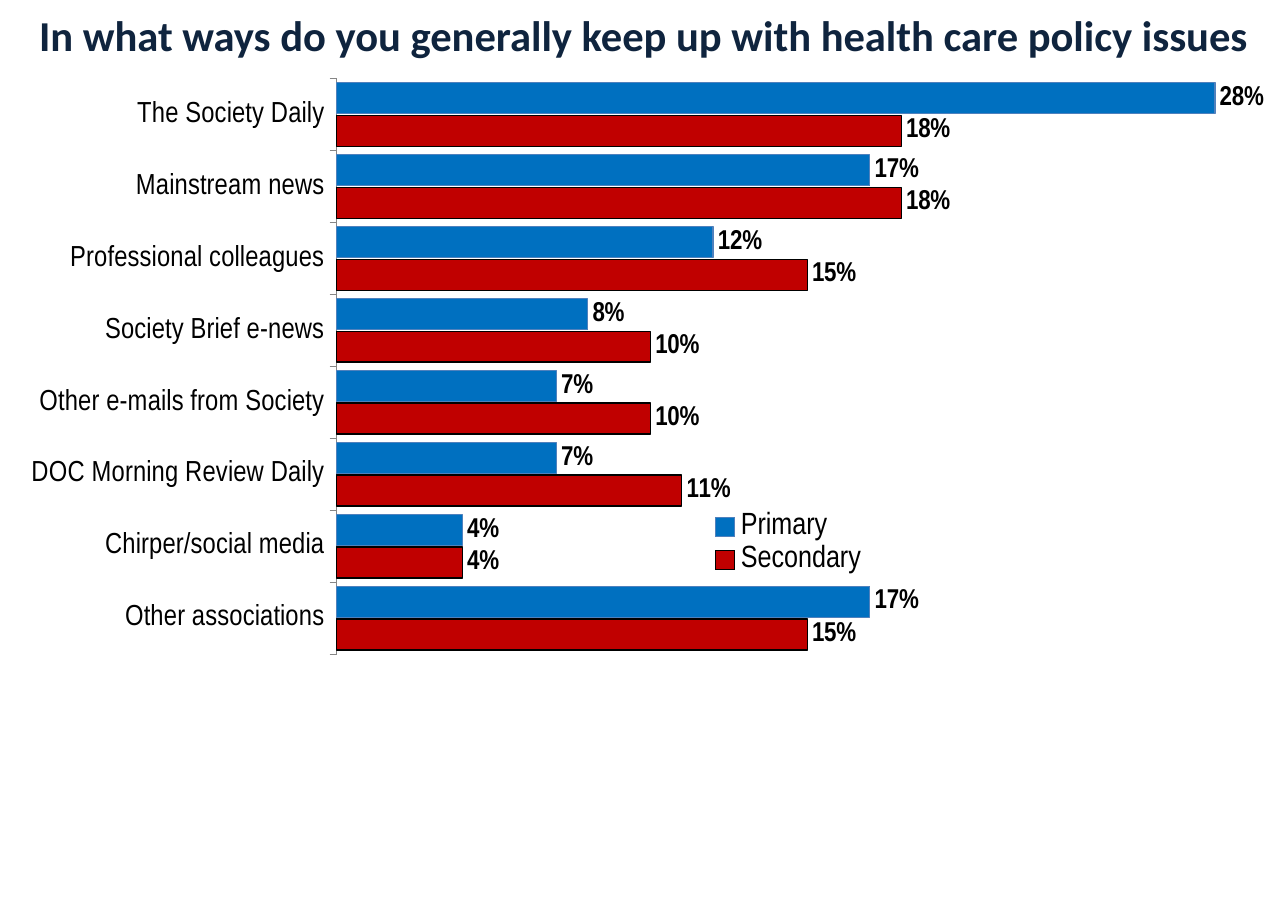
from dataclasses import dataclass

import pptx
import pptx.chart.data
import pptx.dml.color
import pptx.enum.chart
import pptx.enum.text
import pptx.oxml
import pptx.oxml.ns
import pptx.util

Pt = pptx.util.Pt
LABEL_FONT = "Arial Narrow"


@dataclass
class Answers:
    name: str
    fill: str
    outline: str
    shares: list[float]


SOURCES = [
    "Other associations", "Chirper/social media", "DOC Morning Review Daily",
    "Other e-mails from Society", "Society Brief e-news", "Professional colleagues",
    "Mainstream news", "The Society Daily",
]
ANSWERS = [
    Answers("Secondary", "C00000", "000000",
            [0.15, 0.04, 0.11, 0.10, 0.10, 0.15, 0.18, 0.18]),
    Answers("Primary", "0070C0", "4F81BD",
            [0.17, 0.04, 0.07, 0.07, 0.08, 0.12, 0.17, 0.28]),
]


def color(value: str) -> pptx.dml.color.RGBColor:
    return pptx.dml.color.RGBColor.from_string(value)


def style_font(font, name: str, size: float, fill: str = "000000", bold: bool = False) -> None:
    font.name = name
    font.size = Pt(size)
    font.bold = bold
    font.color.rgb = color(fill)


def add_text(page, text: str, *, left: float, top: float, width: float, height: float,
             font: str, size: float, fill: str, bold: bool) -> None:
    """Add a text box with one paragraph, centred both ways."""
    box = page.shapes.add_textbox(Pt(left), Pt(top), Pt(width), Pt(height))
    frame = box.text_frame
    frame.word_wrap = True
    frame.vertical_anchor = pptx.enum.text.MSO_ANCHOR.MIDDLE
    para = frame.paragraphs[0]
    para.alignment = pptx.enum.text.PP_ALIGN.CENTER
    span = para.add_run()
    span.text = text
    style_font(span.font, font, size, fill, bold)


def place(element, index: int, x: float, y: float, w: float, h: float,
          inner: bool = False) -> None:
    """Give a chart part a manual layout, in fractions of the chart."""
    for old in element.findall(pptx.oxml.ns.qn("c:layout")):
        element.remove(old)
    target = '<c:layoutTarget val="inner"/>' if inner else ""
    modes = "".join(f'<c:{axis}Mode val="edge"/>' for axis in "xy")
    sizes = "".join(f'<c:{key} val="{value}"/>'
                    for key, value in zip("xywh", (x, y, w, h)))
    element.insert(index, pptx.oxml.parse_xml(
        f'<c:layout {pptx.oxml.ns.nsdecls("c")}><c:manualLayout>'
        f"{target}{modes}{sizes}</c:manualLayout></c:layout>"))


def style_series(series, answers: Answers) -> None:
    series.format.fill.solid()
    series.format.fill.fore_color.rgb = color(answers.fill)
    series.format.line.color.rgb = color(answers.outline)
    series.format.line.width = Pt(0.75)
    series.invert_if_negative = False
    labels = series.data_labels
    labels.show_value = True
    labels.number_format = "0%"
    labels.number_format_is_linked = False
    labels.position = pptx.enum.chart.XL_LABEL_POSITION.OUTSIDE_END
    style_font(labels.font, LABEL_FONT, 16, bold=True)


def add_survey_chart(page) -> None:
    data = pptx.chart.data.CategoryChartData(number_format="0%")
    data.categories = SOURCES
    for answers in ANSWERS:
        data.add_series(answers.name, answers.shares)
    chart = page.shapes.add_chart(
        pptx.enum.chart.XL_CHART_TYPE.BAR_CLUSTERED,
        Pt(5.76), Pt(40.32), Pt(761.76), Pt(344.16), data).chart
    style_font(chart.font, "Calibri", 16)
    chart.has_title = False

    plot = chart.plots[0]
    plot.gap_width = 27
    plot.overlap = -5
    plot.vary_by_categories = False
    for series, answers in zip(plot.series, ANSWERS):
        style_series(series, answers)

    source_axis = chart.category_axis
    source_axis.major_tick_mark = pptx.enum.chart.XL_TICK_MARK.OUTSIDE
    source_axis.format.line.color.rgb = color("868686")
    style_font(source_axis.tick_labels.font, LABEL_FONT, 17)

    share_axis = chart.value_axis
    share_axis.minimum_scale = 0
    share_axis.maximum_scale = 0.3
    share_axis.major_unit = 0.3
    share_axis.has_major_gridlines = False
    share_axis.visible = False

    chart.has_legend = True
    legend = chart.legend
    legend.position = pptx.enum.chart.XL_LEGEND_POSITION.RIGHT
    legend.include_in_layout = False
    style_font(legend.font, LABEL_FONT, 18)

    legend_element = chart.element.find(".//" + pptx.oxml.ns.qn("c:legend"))
    plot_area = chart.element.find(".//" + pptx.oxml.ns.qn("c:plotArea"))
    place(legend_element, 1, 0.53, 0.75, 0.14, 0.12)
    place(plot_area, 0, 0.252, 0.017, 0.725, 0.982, inner=True)


def main() -> None:
    deck = pptx.Presentation()
    deck.slide_width = Pt(756)
    deck.slide_height = Pt(540)
    page = deck.slides.add_slide(deck.slide_layouts[6])
    add_text(page, "In what ways do you generally keep up with health care policy issues",
             left=5.76, top=1.44, width=743.76, height=38.16,
             font="Calibri", size=25, fill="0F243E", bold=True)
    add_survey_chart(page)
    deck.save("out.pptx")


if __name__ == "__main__":
    main()
